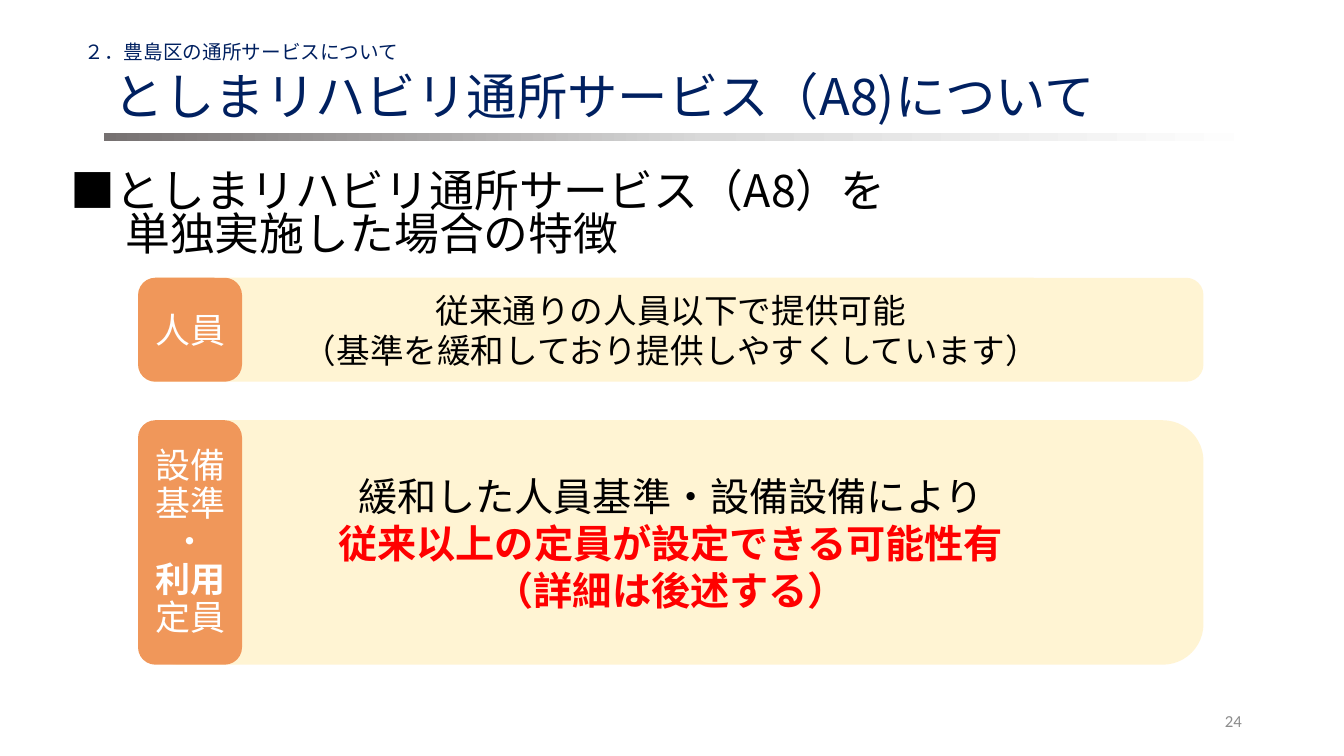
from copy import deepcopy

from lxml.etree import SubElement
from pptx import Presentation
from pptx.dml.color import RGBColor
from pptx.enum.shapes import MSO_SHAPE
from pptx.enum.text import MSO_ANCHOR, MSO_AUTO_SIZE, PP_ALIGN
from pptx.oxml.ns import qn
from pptx.util import Cm, Pt

NAVY, BLACK, WHITE, RED = "002060", "000000", "FFFFFF", "FF0000"
CREAM, ORANGE, GRAY = "FFE699", "F0975A", "8C8C8C"


def paint(color):
    """Turn a hex string into a colour."""
    return RGBColor.from_string(color)


class Deck:
    """Holds the style and the current slide."""

    font = "Noto Sans CJK JP"

    def __init__(self):
        """Open a wide deck with one title-only slide."""
        self.deck = Presentation()
        self.deck.slide_width, self.deck.slide_height = Cm(33.87), Cm(19.05)
        self.slide = self.deck.slides.add_slide(self.deck.slide_layouts[5])

    def label(self, shape, lines, size, color, align=PP_ALIGN.LEFT, gap=None, font=None):
        """Fill a shape with lines of (text, colour, bold, indent), the last three optional."""
        frame = shape.text_frame
        frame.word_wrap = True
        frame.auto_size = MSO_AUTO_SIZE.NONE
        frame.vertical_anchor = MSO_ANCHOR.MIDDLE
        for row, line in enumerate(lines):
            text, tint, bold, indent = (*line, *(None, False, 0)[len(line) - 1:])
            para = frame.paragraphs[0] if row == 0 else frame.add_paragraph()
            para.alignment = align
            para.line_spacing = gap
            if indent:
                para._p.get_or_add_pPr().set("marL", str(Cm(indent)))
            run = para.add_run()
            run.text = text
            run.font.name = font or self.font
            run.font.size = Pt(size)
            run.font.bold = bold
            run.font.color.rgb = paint(tint or color)
            SubElement(run._r.get_or_add_rPr(), qn("a:ea")).set("typeface", self.font)

    def title(self, box, text, size, color):
        """Place and format the title placeholder."""
        head = self.slide.shapes.title
        head.left, head.top, head.width, head.height = map(Cm, box)
        self.label(head, [(text,)], size, color, gap=0.9)

    def text(self, box, lines, size, color, **style):
        """Add a text box."""
        area = self.slide.shapes.add_textbox(*map(Cm, box))
        self.label(area, lines, size, color, **style)

    def shape(self, kind, box):
        """Add a bare shape without line or shadow."""
        form = self.slide.shapes.add_shape(kind, *map(Cm, box))
        form.shadow.inherit = False
        form.line.fill.background()
        return form

    def card(self, box, fill, lines, size, color, alpha=None, gap=None):
        """Add a rounded card with centred text."""
        form = self.shape(MSO_SHAPE.ROUNDED_RECTANGLE, box)
        form.fill.solid()
        form.fill.fore_color.rgb = paint(fill)
        if alpha:
            tone = form._element.spPr.find(".//" + qn("a:srgbClr"))
            SubElement(tone, qn("a:alpha")).set("val", str(alpha * 1000))
        self.label(form, lines, size, color, PP_ALIGN.CENTER, gap)

    def rule(self, box, stops):
        """Add a bar that fades through three (place, colour) stops."""
        form = self.shape(MSO_SHAPE.FLOWCHART_PROCESS, box)
        form.fill.gradient()
        form.fill.gradient_angle = 0
        first = form._element.spPr.find(".//" + qn("a:gs"))
        first.addnext(deepcopy(first))
        for stop, (place, color) in zip(form.fill.gradient_stops, stops):
            stop.position = place
            stop.color.rgb = paint(color)


def main():
    """Build the slide."""
    deck = Deck()
    deck.title((1.88, 0.91, 18.19, 0.86), "２．豊島区の通所サービスについて", 14, NAVY)
    deck.text((2.62, 1.65, 29.21, 1.7), [("としまリハビリ通所サービス（A8)について",)],
              36, NAVY, gap=0.9)
    deck.rule((2.62, 3.35, 29.21, 0.2), [(0, "767171"), (0.52, "D9D9D9"), (1, WHITE)])
    deck.text((0.41, 4.17, 29.21, 2.54),
              [("■としまリハビリ通所サービス（A8）を", None, False, 1.13),
               ("単独実施した場合の特徴", None, False, 2.5)], 32, BLACK, gap=0.8)

    staff = [("従来通りの人員以下で提供可能",),
             ("（基準を緩和しており提供しやすくしています）",)]
    places = [("緩和した人員基準・設備設備により",),
              ("従来以上の定員が設定できる可能性有", RED, True),
              ("（詳細は後述する）", RED, True)]
    limits = [("設備",), ("基準",), ("・",), ("利用", None, True), ("定員",)]
    rows = [(7, 2.62, [("人員",)], None, staff, 24),
            (10.59, 6.16, limits, Pt(27), places, 28)]
    for top, high, tag, gap, body, size in rows:
        deck.card((3.48, top, 26.85, high), CREAM, body, size, BLACK, alpha=43)
        deck.card((3.48, top, 2.62, high), ORANGE, tag, 25, WHITE, gap=gap)

    deck.text((23.93, 17.65, 7.62, 1.02), [("24",)], 12, GRAY,
              align=PP_ALIGN.RIGHT, font="Calibri")
    deck.deck.save("out.pptx")


if __name__ == "__main__":
    main()
